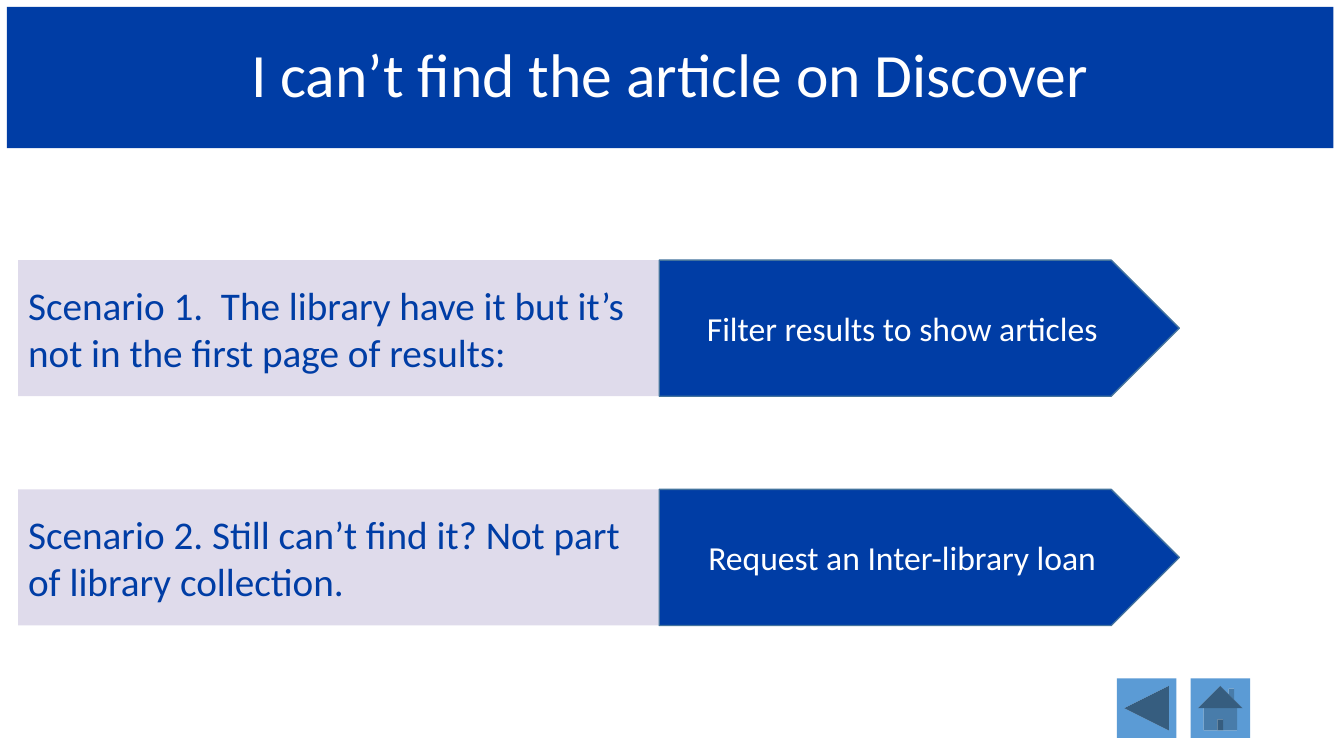
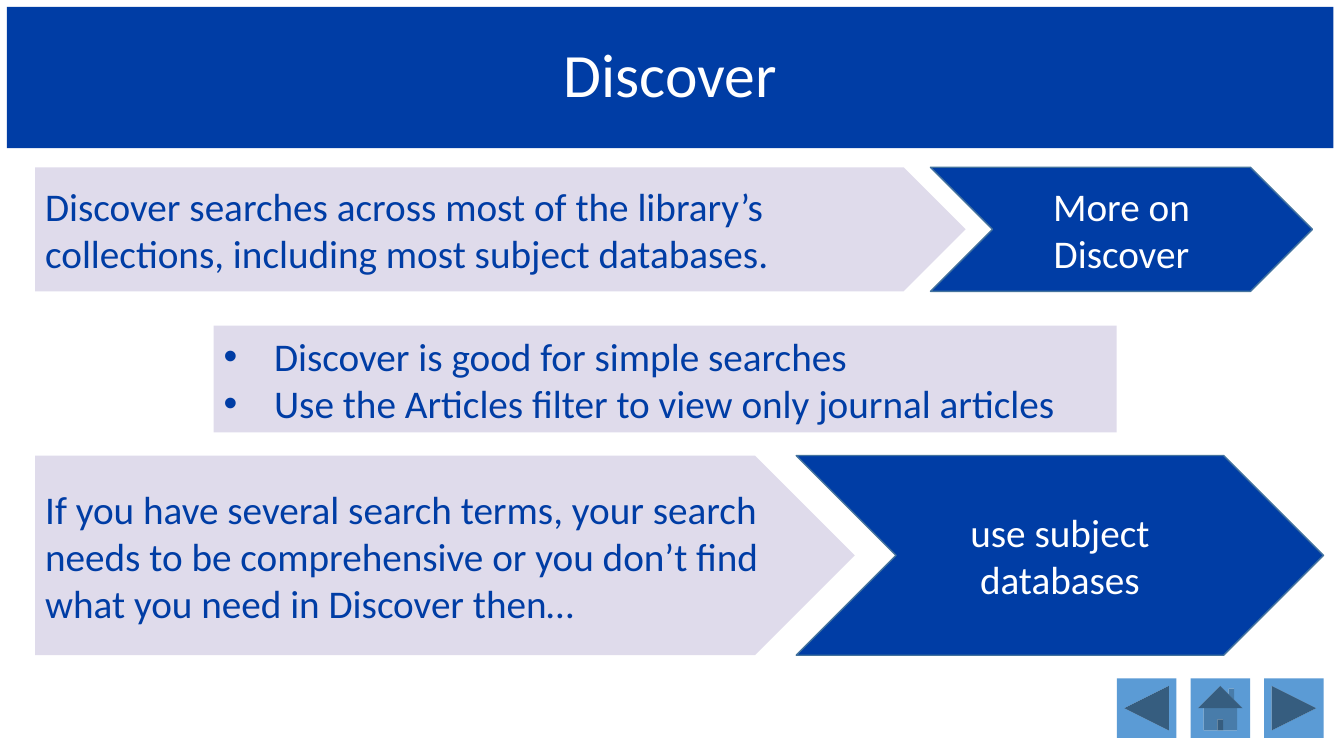
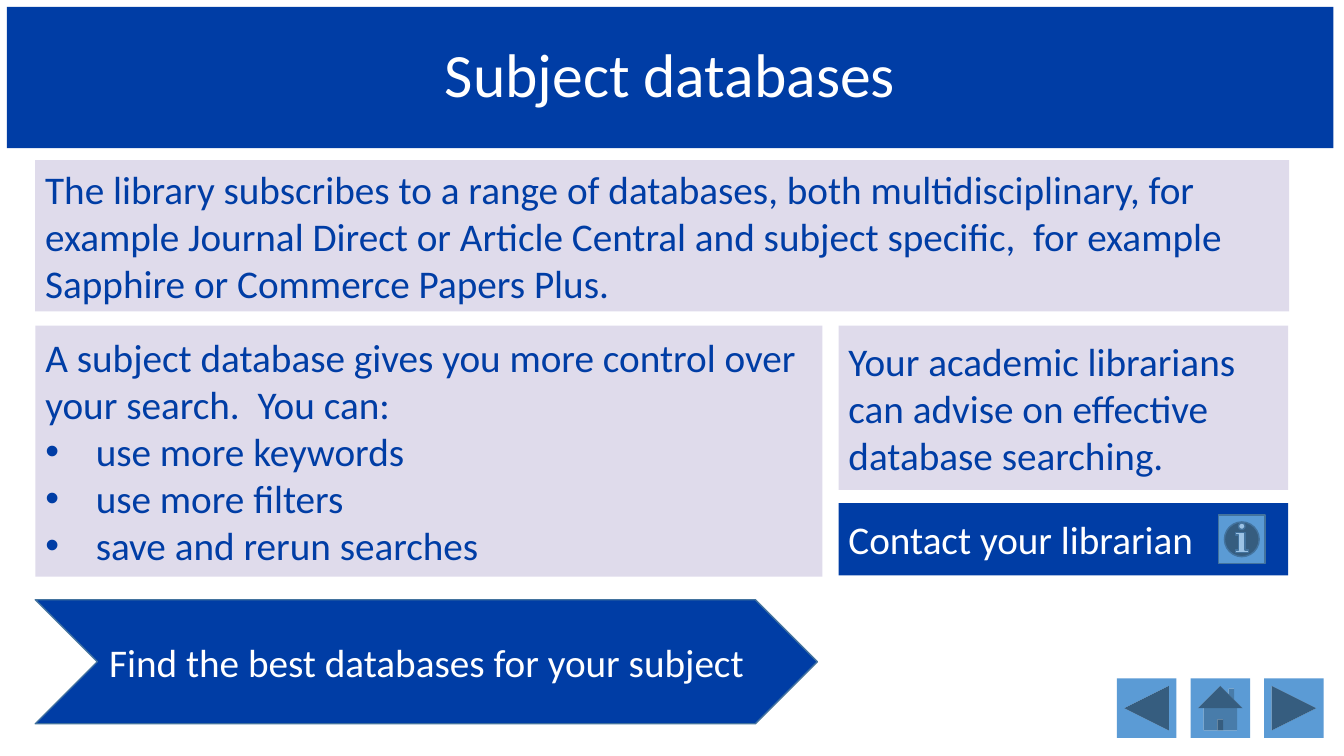
from lxml import etree
from pptx import Presentation
from pptx.dml.color import RGBColor
from pptx.enum.shapes import MSO_SHAPE
from pptx.enum.text import MSO_ANCHOR, MSO_AUTO_SIZE, PP_ALIGN
from pptx.oxml.ns import qn
from pptx.util import Pt

RECTANGLE, PLATE, CHEVRON = MSO_SHAPE.RECTANGLE, MSO_SHAPE.PENTAGON, MSO_SHAPE.CHEVRON
BACK, HOME = MSO_SHAPE.ACTION_BUTTON_BACK_OR_PREVIOUS, MSO_SHAPE.ACTION_BUTTON_HOME
NEXT = MSO_SHAPE.ACTION_BUTTON_FORWARD_OR_NEXT
INFORMATION = MSO_SHAPE.ACTION_BUTTON_INFORMATION
LEFT, CENTER, MIDDLE = PP_ALIGN.LEFT, PP_ALIGN.CENTER, MSO_ANCHOR.MIDDLE
NO_AUTOFIT = MSO_AUTO_SIZE.NONE

BLUE = RGBColor(0x00, 0x3D, 0xA5)
PURPLE = RGBColor(0x82, 0x70, 0xB3)
BUTTON_BLUE = RGBColor(0x5B, 0x9B, 0xD5)
OUTLINE = RGBColor(0x43, 0x73, 0x9E)
WHITE = RGBColor(0xFF, 0xFF, 0xFF)
FONT = "Calibri"
TITLE_BOX = (5, 5, 947.5, 100.8)
BUTTON_LEFT, BUTTON_TOP, BUTTON_SIZE, BUTTON_PITCH = 797.8, 484.6, 42.5, 52.6
MARGIN = 25.2
BULLET_INDENT = 36


def style_shape(shape, box, fill, outlined=False):
    """Place a shape and paint it; purple is always a 25 % tint."""
    shape.left, shape.top, shape.width, shape.height = [Pt(length) for length in box]
    shape.shadow.inherit = False
    shape.fill.solid()
    shape.fill.fore_color.rgb = fill
    if fill == PURPLE:
        color = shape._element.spPr.find(qn("a:solidFill")).find(qn("a:srgbClr"))
        etree.SubElement(color, qn("a:alpha"), val="25000")
    if outlined:
        shape.line.color.rgb = OUTLINE
        shape.line.width = Pt(1)
    else:
        shape.line.fill.background()


def write_text(shape, lines, size, color, alignment=LEFT, bullets_from=None):
    """Write one paragraph a line; lines from bullets_from on get a bullet."""
    frame = shape.text_frame
    frame.word_wrap = True
    frame.auto_size = NO_AUTOFIT
    frame.vertical_anchor = MIDDLE
    frame.text = "\n".join(lines)
    for index, paragraph in enumerate(frame.paragraphs):
        properties = paragraph._p.get_or_add_pPr()
        if bullets_from is not None:
            bulleted = index >= bullets_from
            indent = Pt(BULLET_INDENT) if bulleted else 0
            properties.set("marL", str(indent))
            properties.set("indent", str(-indent))
            if bulleted:
                etree.SubElement(properties, qn("a:buFont"), typeface="Arial")
                etree.SubElement(properties, qn("a:buChar"), char="•")
            else:
                etree.SubElement(properties, qn("a:buNone"))
        paragraph.alignment = alignment
        paragraph.space_before = Pt(0)
        paragraph.font.name = FONT
        paragraph.font.size = Pt(size)
        paragraph.font.color.rgb = color


# Panels: preset, box, fill, text size, text
# Body: box, lines, index of the first bulleted line
scenarios = [
    ("Scenario 1.  The library have it but it’s not in the first page of results:",
     "Filter results to show articles"),
    ("Scenario 2. Still can’t find it? Not part of library collection.",
     "Request an Inter-library loan"),
]
scenario_panels = []
for row, (problem, answer) in enumerate(scenarios):
    top = 185.8 + row * 163.8
    scenario_panels.append((RECTANGLE, (13, top, 457.9, 97.2), PURPLE, 28, problem))
    scenario_panels.append((PLATE, (470.9, top, 371.5, 97.2), BLUE, 24, answer))

discover_panels = [
    (PLATE, (MARGIN, 119.5, 664.6, 88.6), PURPLE, 28,
     "Discover searches across most of the library’s collections, "
     "including most subject databases."),
    (CHEVRON, (664.6, 119.5, 272.9, 88.6), BLUE, 28, "More on Discover"),
    (PLATE, (MARGIN, 325.4, 585.4, 142.6), PURPLE, 28,
     "If you have several search terms, your search needs to be comprehensive "
     "or you don’t find what you need in Discover then…"),
    (CHEVRON, (568.8, 325.4, 376.6, 142.6), BLUE, 28, "use subject databases"),
]
discover_body = ((152.6, 232.6, 645.1, 76.3), [
    "Discover is good for simple searches",
    "Use the Articles filter to view only journal articles",
], 0)

database_panels = [
    (RECTANGLE, (MARGIN, 114.5, 895.7, 108), PURPLE, 28,
     "The library subscribes to a range of databases, both multidisciplinary, "
     "for example Journal Direct or Article Central and subject specific,  "
     "for example Sapphire or Commerce Papers Plus."),
    (RECTANGLE, (599, 232.6, 321.1, 117.4), PURPLE, 28,
     "Your academic librarians can advise on effective database searching."),
    (RECTANGLE, (599, 359.3, 321.1, 51.8), BLUE, 28, "Contact your librarian"),
    (CHEVRON, (MARGIN, 428.4, 558.7, 88.6), BLUE, 28,
     "Find the best databases for your subject"),
]
database_body = ((MARGIN, 232.6, 562.3, 179.3), [
    "A subject database gives you more control over your search.  You can:",
    "use more keywords",
    "use more filters",
    "save and rerun searches",
], 1)

slides = [
    ("I can’t find the article on Discover", scenario_panels, None, [BACK, HOME]),
    ("Discover", discover_panels, discover_body, [BACK, HOME, NEXT]),
    ("Subject databases", database_panels, database_body, [BACK, HOME, NEXT]),
]

presentation = Presentation()
presentation.slide_width, presentation.slide_height = Pt(960), Pt(540)
content_layout, title_only_layout = [presentation.slide_layouts[i] for i in (1, 5)]

for title, panels, body, buttons in slides:
    slide = presentation.slides.add_slide(content_layout if body else title_only_layout)

    # Title band
    band = slide.shapes.title
    style_shape(band, TITLE_BOX, BLUE)
    write_text(band, [title], 44, WHITE, CENTER)
    band.text_frame.paragraphs[0].line_spacing = 0.9

    # List
    if body:
        box, lines, bullets_from = body
        placeholder = slide.placeholders[1]
        style_shape(placeholder, box, PURPLE)
        write_text(placeholder, lines, 28, BLUE, bullets_from=bullets_from)

    # Panels and arrows
    for preset, box, fill, size, text in panels:
        is_arrow = fill == BLUE and preset != RECTANGLE
        shape = slide.shapes.add_shape(preset, 0, 0, 0, 0)
        style_shape(shape, box, fill, outlined=is_arrow)
        write_text(shape, [text], size, WHITE if fill == BLUE else BLUE,
                   CENTER if is_arrow else LEFT)

    # Navigation buttons
    for column, preset in enumerate(buttons):
        button = slide.shapes.add_shape(preset, 0, 0, 0, 0)
        left = BUTTON_LEFT + column * BUTTON_PITCH
        style_shape(button, (left, BUTTON_TOP, BUTTON_SIZE, BUTTON_SIZE), BUTTON_BLUE)

# Information button beside the librarian contact on the last slide
information = slide.shapes.add_shape(INFORMATION, 0, 0, 0, 0)
style_shape(information, (870.5, 367.9, 33.1, 34.6), BUTTON_BLUE, outlined=True)

presentation.save("out.pptx")
